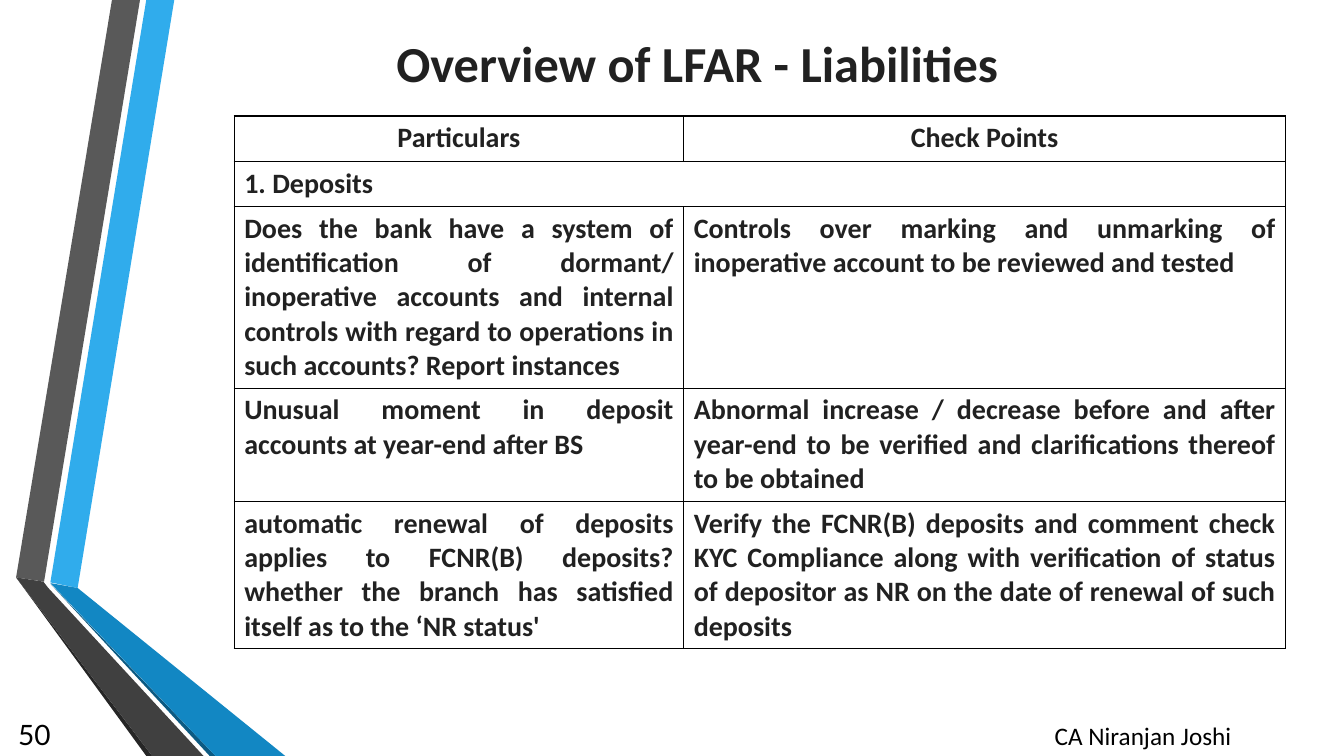
from dataclasses import dataclass

from lxml.etree import SubElement
from pptx import Presentation
from pptx.dml.color import RGBColor
from pptx.enum.text import MSO_ANCHOR, MSO_AUTO_SIZE, PP_ALIGN
from pptx.oxml.ns import qn
from pptx.util import Pt

COLOURS = {
    "ink": "212121", "black": "000000", "sky": "30ACEC", "grey": "595959",
    "near_black": "262626", "navy": "0C5A82", "blue": "1287C3", "charcoal": "404040",
}
BORDER_WIDTH = 1


@dataclass
class Ribbon:
    colour: str
    corners: list[tuple[float, float]]


@dataclass
class Label:
    wording: str
    box: tuple[float, float, float, float]
    size: float
    font: str
    align: PP_ALIGN
    anchor: MSO_ANCHOR


@dataclass
class Row:
    height: float
    align: PP_ALIGN
    texts: list[str]


RIBBONS = [
    Ribbon("sky", [(36, 416), (55.5, 420), (124.5, 0), (104.5, 0)]),
    Ribbon("grey", [(100, 0), (80, 0), (11.5, 412.5), (31.5, 415.5)]),
    Ribbon("near_black", [(11.5, 412.5), (104.5, 540), (108.7, 540)]),
    Ribbon("navy", [(36, 417), (149.8, 540), (154, 540)]),
    Ribbon("blue", [(36, 416.5), (154, 540), (203.8, 540), (55.5, 420)]),
    Ribbon("charcoal", [(145.4, 540), (34.5, 420), (31, 415.5), (11.5, 412.5), (108.7, 540)]),
]

LABELS = [
    Label("CA Niranjan Joshi", (690.5, 511.2, 252, 28.8), 18, "Calibri",
          PP_ALIGN.CENTER, MSO_ANCHOR.TOP),
    Label("50", (0, 509.8, 43.2, 28.8), 20, "Lato", PP_ALIGN.RIGHT, MSO_ANCHOR.MIDDLE),
]

COLUMN_WIDTHS = [321.1, 429.9]
ROWS = [
    Row(32.4, PP_ALIGN.CENTER, ["Particulars", "Check Points"]),
    Row(32.4, PP_ALIGN.LEFT, ["1. Deposits"]),
    Row(129.3, PP_ALIGN.JUSTIFY, [
        "Does the bank have a system of identification of dormant/ inoperative accounts "
        "and internal controls with regard to operations in such accounts? Report instances",
        "Controls over marking and unmarking of inoperative account to be reviewed and tested",
    ]),
    Row(80.9, PP_ALIGN.JUSTIFY, [
        "Unusual moment in deposit accounts at year-end after BS",
        "Abnormal increase / decrease before and after year-end to be verified and "
        "clarifications thereof to be obtained",
    ]),
    Row(105.2, PP_ALIGN.JUSTIFY, [
        "automatic renewal of deposits applies to FCNR(B) deposits? whether the branch "
        "has satisfied itself as to the ‘NR status'",
        "Verify the FCNR(B) deposits and comment check KYC Compliance along with "
        "verification of status of depositor as NR on the date of renewal of such deposits",
    ]),
]


def rgb(name: str) -> RGBColor:
    return RGBColor.from_string(COLOURS[name])


def write(frame, wording: str, size: float, align: PP_ALIGN, font: str = "Calibri",
          colour: str = "ink", bold: bool = True) -> None:
    frame.text = wording
    frame.word_wrap = True
    paragraph = frame.paragraphs[0]
    paragraph.alignment = align
    for run in paragraph.runs:
        run.font.size = Pt(size)
        run.font.name = font
        run.font.bold = bold
        run.font.color.rgb = rgb(colour)


def draw_ribbon(slide, ribbon: Ribbon) -> None:
    first, *others = [(Pt(x), Pt(y)) for x, y in ribbon.corners]
    builder = slide.shapes.build_freeform(*first)
    builder.add_line_segments(others, close=True)
    band = builder.convert_to_shape()
    band.shadow.inherit = False
    band.fill.solid()
    band.fill.fore_color.rgb = rgb(ribbon.colour)
    band.line.fill.background()


def add_title(slide) -> None:
    title = slide.shapes.title
    title.left, title.top, title.width, title.height = Pt(174.2), Pt(18), Pt(648), Pt(53.3)
    frame = title.text_frame
    frame.auto_size = MSO_AUTO_SIZE.NONE
    frame.vertical_anchor = MSO_ANCHOR.MIDDLE
    write(frame, "Overview of LFAR - Liabilities", 36, PP_ALIGN.CENTER)


def add_label(slide, label: Label) -> None:
    frame = slide.shapes.add_textbox(*map(Pt, label.box)).text_frame
    frame.vertical_anchor = label.anchor
    write(frame, label.wording, label.size, label.align, label.font, "black", False)


def add_borders(cell) -> None:
    properties = cell._tc.get_or_add_tcPr()
    for position, side in enumerate(("a:lnL", "a:lnR", "a:lnT", "a:lnB")):
        line = SubElement(properties, qn(side), w=str(Pt(BORDER_WIDTH)))
        fill = SubElement(line, qn("a:solidFill"))
        SubElement(fill, qn("a:srgbClr"), val=COLOURS["black"])
        properties.insert(position, line)


def add_checklist(slide) -> None:
    height = sum(row.height for row in ROWS)
    checklist = slide.shapes.add_table(
        len(ROWS), len(COLUMN_WIDTHS), Pt(167.3), Pt(82.8), Pt(sum(COLUMN_WIDTHS)), Pt(height)
    ).table
    checklist.first_row = checklist.horz_banding = False
    for column, width in zip(checklist.columns, COLUMN_WIDTHS):
        column.width = Pt(width)
    for index, row in enumerate(ROWS):
        checklist.rows[index].height = Pt(row.height)
        for cell in checklist.rows[index].cells:
            cell.fill.background()
            add_borders(cell)
        for column, wording in enumerate(row.texts):
            write(checklist.cell(index, column).text_frame, wording, 20, row.align)
        # A single text spans the whole row
        if len(row.texts) == 1:
            checklist.cell(index, 0).merge(checklist.cell(index, len(COLUMN_WIDTHS) - 1))


def main() -> None:
    deck = Presentation()
    deck.slide_width, deck.slide_height = Pt(960), Pt(540)
    slide = deck.slides.add_slide(deck.slide_layouts[5])

    # Folded ribbons on the left
    for ribbon in RIBBONS:
        draw_ribbon(slide, ribbon)

    # Heading and table
    add_title(slide)
    add_checklist(slide)

    # Author and page number
    for label in LABELS:
        add_label(slide, label)

    deck.save("out.pptx")


if __name__ == "__main__":
    main()
